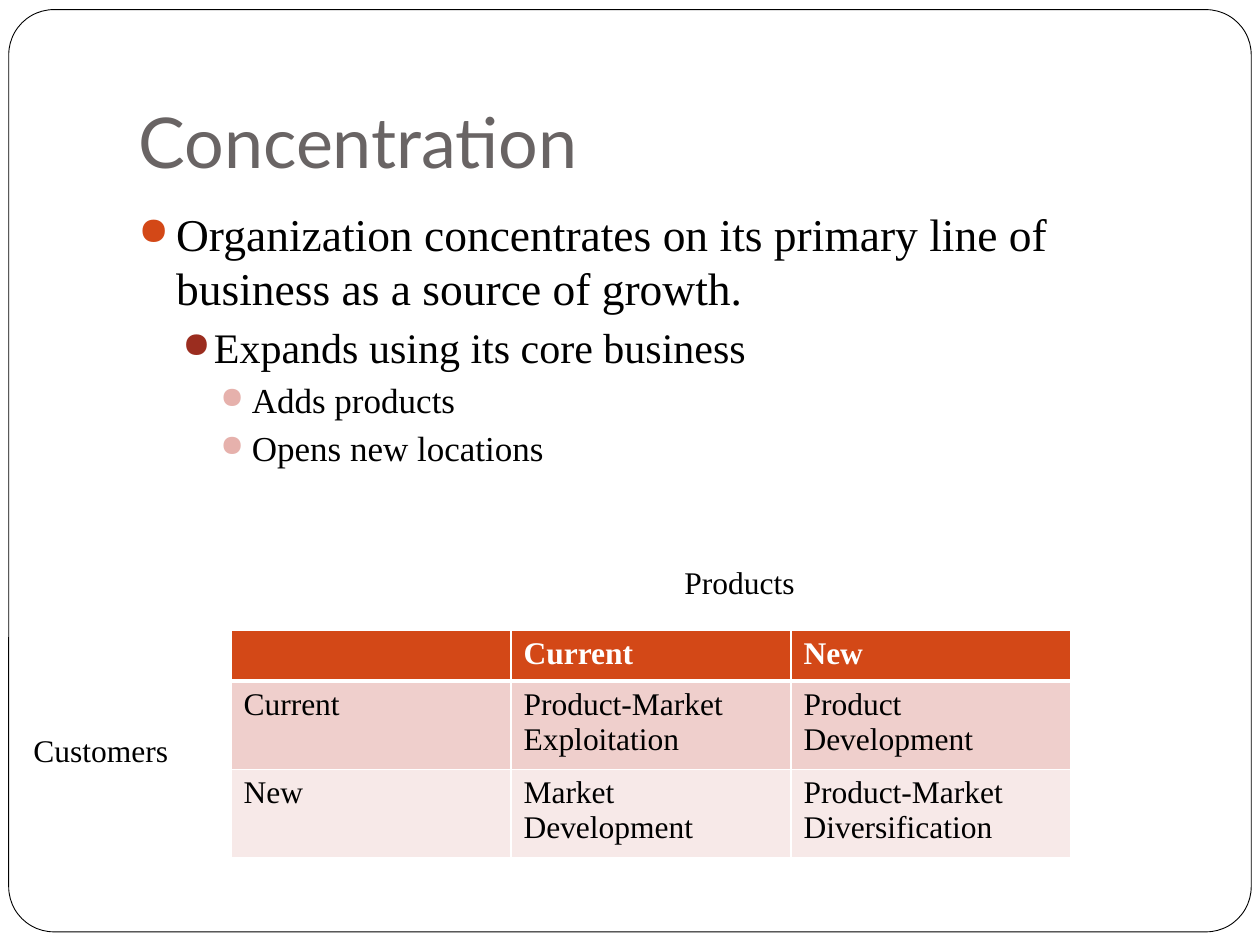
import pptx
import pptx.util
import pptx.dml.color
import pptx.enum.shapes
import pptx.enum.text
import pptx.oxml
import pptx.oxml.ns

Pt = pptx.util.Pt
ANCHOR = pptx.enum.text.MSO_ANCHOR
ALIGN = pptx.enum.text.PP_ALIGN
SERIF = "Times New Roman"
NS = pptx.oxml.ns.nsdecls("a")

# Bullet levels: indent, hang, space before, text size, bullet colour
LEVELS = [
    (21.6, 21.6, 5.8, 26, "D34817"),
    (43.2, 18, 3.7, 24, "9B2D1F"),
    (64.8, 18, 3.7, 20, "E6B1AC"),
]
POINTS = [
    (0, "Organization concentrates on its primary line of business as a source of growth."),
    (1, "Expands using its core business"),
    (2, "Adds products"),
    (2, "Opens new locations"),
]
GRID = [
    ["", "Current", "New"],
    ["Current", "Product-Market Exploitation", "Product Development"],
    ["New", "Market Development", "Product-Market Diversification"],
]
FILLS = ["D34817", "EFCFCC", "F7E9E8"]
ROWS = [29.2, 47, 47]


def color(code):
    return pptx.dml.color.RGBColor.from_string(code)


def apply(item, values):
    for name, value in values.items():
        setattr(item, name, value)


def write(para, text, size, code="000000", face=SERIF, bold=False):
    run = para.add_run()
    run.text = text
    apply(run.font, {"size": Pt(size), "name": face, "bold": bold})
    run.font.color.rgb = color(code)


def place(shape, box):
    names = ("left", "top", "width", "height")
    apply(shape, {name: Pt(size) for name, size in zip(names, box)})


def add_frame(slide, box):
    kind = pptx.enum.shapes.MSO_SHAPE.ROUNDED_RECTANGLE
    frame = slide.shapes.add_shape(kind, *map(Pt, box))
    frame.adjustments[0] = 0.049
    frame.shadow.inherit = False
    frame.fill.solid()
    frame.fill.fore_color.rgb = color("FFFFFF")
    frame.line.color.rgb = color("000000")
    frame.line.width = Pt(0.5)
    # Send behind the title
    slide.shapes._spTree.insert(2, frame._element)


def add_title(slide, box):
    title = slide.shapes.title
    place(title, box)
    apply(title.text_frame, {
        "vertical_anchor": ANCHOR.BOTTOM,
        "word_wrap": True,
        "auto_size": pptx.enum.text.MSO_AUTO_SIZE.NONE,
        "margin_bottom": Pt(7.2),
    })
    para = title.text_frame.paragraphs[0]
    para.alignment = ALIGN.LEFT
    write(para, "Concentration", 40, "696464", "Lato")


def add_bullet(para, indent, hang, code):
    props = para._p.get_or_add_pPr()
    props.set("marL", str(Pt(indent)))
    props.set("indent", str(-Pt(hang)))
    for part in (
        f'<a:buClr {NS}><a:srgbClr val="{code}"/></a:buClr>',
        f'<a:buSzPct {NS} val="85000"/>',
        f'<a:buChar {NS} char="●"/>',
    ):
        props.append(pptx.oxml.parse_xml(part))


def add_body(slide, box):
    frame = slide.shapes.add_textbox(*map(Pt, box)).text_frame
    frame.word_wrap = True
    for index, (level, text) in enumerate(POINTS):
        para = frame.add_paragraph() if index else frame.paragraphs[0]
        indent, hang, space, size, code = LEVELS[level]
        apply(para, {"level": level, "space_before": Pt(space)})
        add_bullet(para, indent, hang, code)
        write(para, text, size)


def add_label(slide, box, text):
    frame = slide.shapes.add_textbox(*map(Pt, box)).text_frame
    frame.word_wrap = True
    write(frame.paragraphs[0], text, 18)


def add_edges(cell, widths):
    props = cell._tc.get_or_add_tcPr()
    for index, (side, width) in enumerate(zip("LRTB", widths)):
        props.insert(index, pptx.oxml.parse_xml(
            f'<a:ln{side} {NS} w="{Pt(width)}"><a:solidFill>'
            f'<a:srgbClr val="FFFFFF"/></a:solidFill></a:ln{side}>'))


def add_grid(slide, box):
    count = len(GRID[0])
    table = slide.shapes.add_table(len(GRID), count, *map(Pt, box)).table
    for col in table.columns:
        col.width = Pt(box[2] / count)
    for r, texts in enumerate(GRID):
        table.rows[r].height = Pt(ROWS[r])
        head = r == 0
        for c, text in enumerate(texts):
            cell = table.cell(r, c)
            cell.fill.solid()
            cell.fill.fore_color.rgb = color(FILLS[r])
            # Heavy rule between the header and the first row
            add_edges(cell, (1, 1, 3 if r == 1 else 1, 3 if head else 1))
            if text:
                write(cell.text_frame.paragraphs[0], text, 18,
                      "FFFFFF" if head else "000000", bold=head)


def main():
    deck = pptx.Presentation()
    apply(deck, {"slide_width": Pt(720), "slide_height": Pt(540)})
    slide = deck.slides.add_slide(deck.slide_layouts[5])
    add_frame(slide, (5, 5.5, 710, 527))
    add_title(slide, (72, 21.6, 612, 90))
    add_body(slide, (72, 114, 612, 360))
    # Matrix with its axis labels
    add_grid(slide, (132, 360, 480, sum(ROWS)))
    add_label(slide, (12, 414, 120, 29), "Customers")
    add_label(slide, (384, 318, 186, 30), "Products")
    deck.save("out.pptx")


if __name__ == "__main__":
    main()
